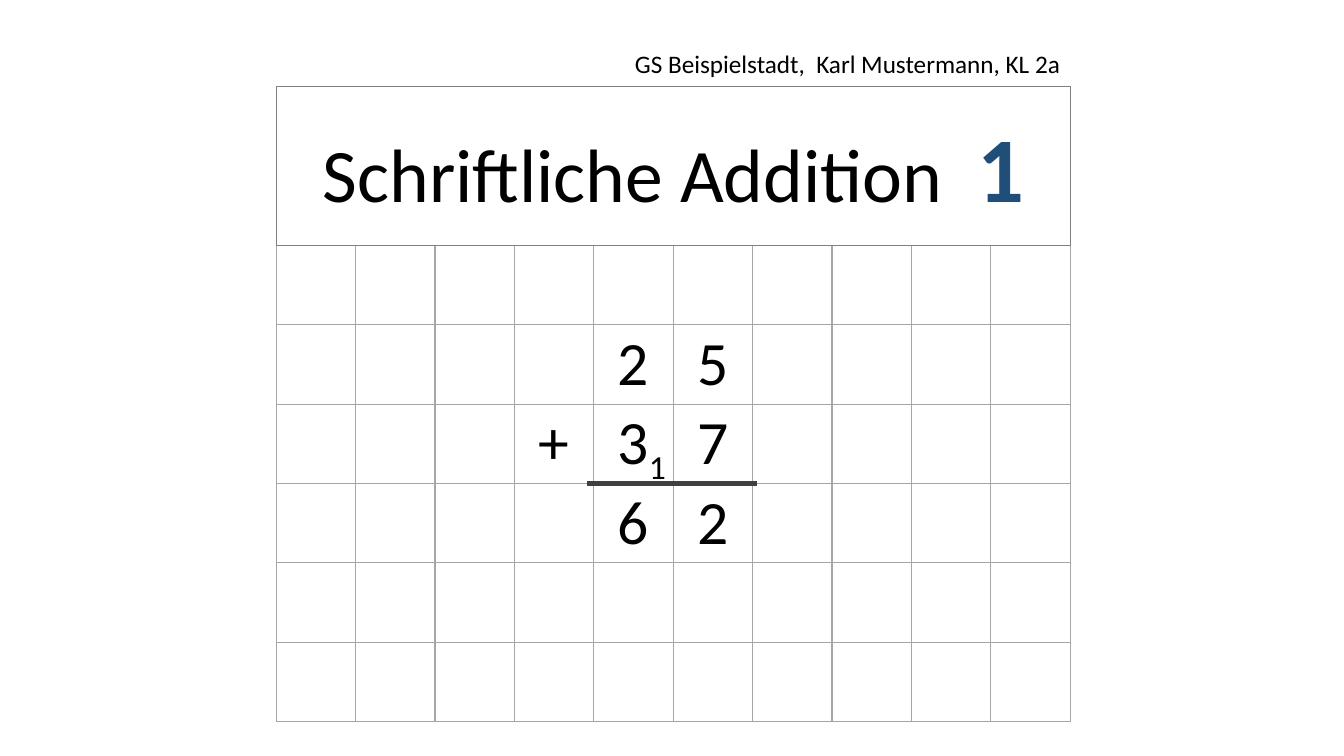
from dataclasses import dataclass

from lxml.etree import SubElement
from pptx import Presentation
from pptx.dml.color import RGBColor
from pptx.enum.shapes import MSO_CONNECTOR
from pptx.enum.text import MSO_ANCHOR, MSO_AUTO_SIZE, PP_ALIGN
from pptx.oxml.ns import qn
from pptx.util import Inches, Pt


@dataclass(frozen=True)
class Theme:
    font: str = "Calibri"
    paper: str = "FFFFFF"
    ink: str = "000000"
    accent: str = "1F4E79"
    grid: str = "A6A6A6"
    frame: str = "808080"
    sum_line: str = "404040"
    title_size: int = 54
    number_size: int = 66
    digit_size: int = 44
    carry_size: int = 24
    label_size: int = 18


THEME = Theme()
COLUMNS, ROWS = 10, 8
GRID_LEFT, GRID_TOP = 2.74, 0.86
CELL = 6.3 / ROWS
DIGITS = {
    (3, 4): "2", (3, 5): "5",
    (4, 3): "+", (4, 4): "3", (4, 5): "7",
    (5, 4): "6", (5, 5): "2",
}


def column_x(column):
    return Inches(GRID_LEFT + column * CELL)


def row_y(row):
    return Inches(GRID_TOP + row * CELL)


def grid_box(column, row, columns, rows):
    """Left, top, width and height of an area counted in grid cells."""
    return column_x(column), row_y(row), Inches(columns * CELL), Inches(rows * CELL)


def format_run(run, size, color=THEME.ink, bold=False):
    run.font.name = THEME.font
    run.font.size = Pt(size)
    run.font.bold = bold
    run.font.color.rgb = RGBColor.from_string(color)


def clear_margins(box):
    box.margin_left = box.margin_right = box.margin_top = box.margin_bottom = 0


def set_borders(cell):
    properties = cell._tc.get_or_add_tcPr()
    for side in ("lnL", "lnR", "lnT", "lnB"):
        line = SubElement(properties, qn(f"a:{side}"), w=str(Pt(1)))
        fill = SubElement(line, qn("a:solidFill"))
        SubElement(fill, qn("a:srgbClr"), val=THEME.grid)


def add_squared_paper(slide):
    frame = slide.shapes.add_table(ROWS, COLUMNS, *grid_box(0, 0, COLUMNS, ROWS))
    table = frame.table
    table.first_row = table.horz_banding = False
    for cell in table.iter_cells():
        set_borders(cell)
        clear_margins(cell)
        cell.fill.solid()
        cell.fill.fore_color.rgb = RGBColor.from_string(THEME.paper)
    for (row, column), digit in DIGITS.items():
        cell = table.cell(row, column)
        cell.vertical_anchor = MSO_ANCHOR.MIDDLE
        paragraph = cell.text_frame.paragraphs[0]
        paragraph.text = digit
        paragraph.alignment = PP_ALIGN.CENTER
        format_run(paragraph.runs[0], THEME.digit_size)
    return frame


def place_title(slide, text, number, paper):
    """Put the framed title over the top two rows of the paper."""
    title = slide.shapes.title
    paper.element.addnext(title.element)
    title.left, title.top, title.width, title.height = grid_box(0, 0, COLUMNS, 2)
    title.fill.solid()
    title.fill.fore_color.rgb = RGBColor.from_string(THEME.paper)
    title.line.color.rgb = RGBColor.from_string(THEME.frame)
    title.line.width = Pt(1)
    text_frame = title.text_frame
    text_frame.auto_size = MSO_AUTO_SIZE.NONE
    text_frame.vertical_anchor = MSO_ANCHOR.MIDDLE
    paragraph = text_frame.paragraphs[0]
    paragraph.text = text
    paragraph.alignment = PP_ALIGN.CENTER
    format_run(paragraph.runs[0], THEME.title_size)
    number_run = paragraph.add_run()
    number_run.text = number
    format_run(number_run, THEME.number_size, THEME.accent, bold=True)


def add_sum_line(slide, start, end, row):
    line = slide.shapes.add_connector(
        MSO_CONNECTOR.STRAIGHT, column_x(start), row_y(row), column_x(end), row_y(row))
    line.line.color.rgb = RGBColor.from_string(THEME.sum_line)
    line.line.width = Pt(3)
    SubElement(line.element.spPr, qn("a:effectLst"))


def add_label(slide, box, text, size, alignment):
    text_frame = slide.shapes.add_textbox(*box).text_frame
    text_frame.word_wrap = True
    text_frame.text = text
    paragraph = text_frame.paragraphs[0]
    paragraph.alignment = alignment
    format_run(paragraph.runs[0], size)
    return text_frame


def main():
    presentation = Presentation()
    presentation.slide_width, presentation.slide_height = Inches(13.33), Inches(7.5)
    slide = presentation.slides.add_slide(presentation.slide_layouts[5])

    paper = add_squared_paper(slide)
    place_title(slide, "Schriftliche Addition  ", "1", paper)
    add_sum_line(slide, 3.91, 6.06, 5)
    carry = add_label(slide, grid_box(4.43, 4.53, 0.74, 0.51), "1",
                      THEME.carry_size, PP_ALIGN.CENTER)
    clear_margins(carry)
    carry.vertical_anchor = MSO_ANCHOR.MIDDLE
    add_label(slide, grid_box(1.05, -0.55, 8.95, 0.51),
              "GS Beispielstadt,  Karl Mustermann, KL 2a",
              THEME.label_size, PP_ALIGN.RIGHT)

    presentation.save("out.pptx")


if __name__ == "__main__":
    main()
